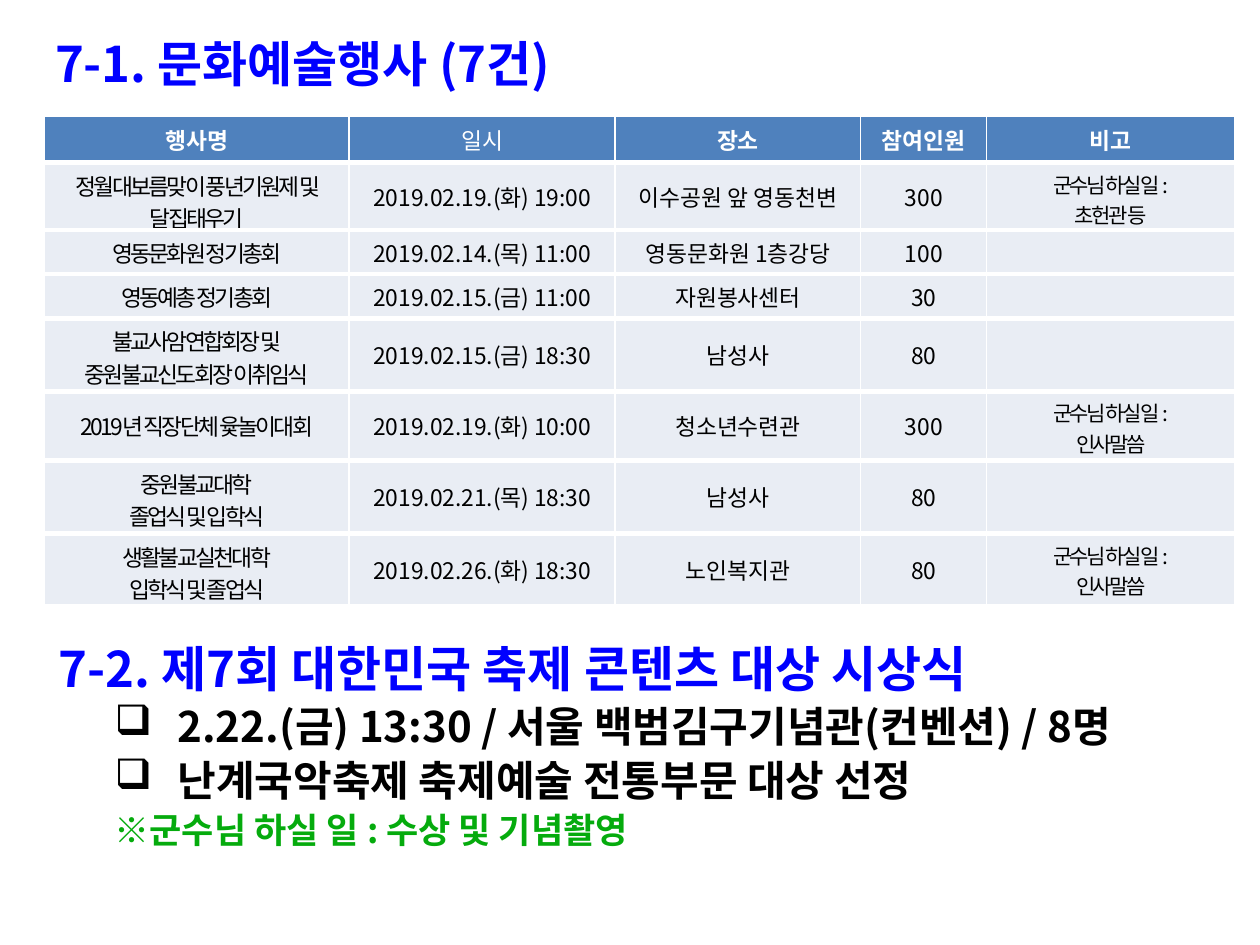
from lxml import etree
from pptx import Presentation
from pptx.dml.color import RGBColor
from pptx.enum import text
from pptx.oxml import ns
from pptx.util import Cm, Pt

FONT = "Noto Sans CJK KR"
BLUE = RGBColor(0x00, 0x00, 0xFF)
GREEN = RGBColor(0x05, 0xAB, 0x0D)
BLACK = RGBColor(0x00, 0x00, 0x00)
WHITE = RGBColor(0xFF, 0xFF, 0xFF)
HEADER_FILL = RGBColor(0x4F, 0x81, 0xBD)
BODY_FILL = RGBColor(0xE9, 0xED, 0xF4)

# Content
TITLE = "7-1. 문화예술행사 (7건)"
HEADERS = ["행사명", "일시", "장소", "참여인원", "비고"]
EVENTS = [
    ("정월대보름맞이 풍년기원제 및 달집태우기", "2019.02.19.(화) 19:00",
     "이수공원 앞 영동천변", "300", "군수님 하실 일 :\n초헌관 등"),
    ("영동문화원 정기총회", "2019.02.14.(목) 11:00", "영동문화원 1층강당", "100", ""),
    ("영동예총 정기총회", "2019.02.15.(금) 11:00", "자원봉사센터", "30", ""),
    ("불교사암연합회장 및\n중원불교신도회장 이취임식", "2019.02.15.(금) 18:30",
     "남성사", "80", ""),
    ("2019년 직장단체 윷놀이대회", "2019.02.19.(화) 10:00",
     "청소년수련관", "300", "군수님 하실 일 :\n인사말씀"),
    ("중원불교대학\n졸업식 및 입학식", "2019.02.21.(목) 18:30", "남성사", "80", ""),
    ("생활불교실천대학\n입학식 및 졸업식", "2019.02.26.(화) 18:30",
     "노인복지관", "80", "군수님 하실 일 :\n인사말씀"),
]
COLUMN_WIDTHS = [6.15, 5.36, 4.95, 2.54, 5]
ROW_HEIGHTS = [0.94, 0.89, 0.89, 0.89, 1.47, 1.4, 1.47, 1.47]
# text, size, colour, left margin, bullet, line spacing
AWARD_LINES = [
    ("7-2. 제7회 대한민국 축제 콘텐츠 대상 시상식", 28, BLUE, 1.42, None, 1.0),
    ("2.22.(금) 13:30 / 서울 백범김구기념관(컨벤션) / 8명", 24, BLACK, 2.54, "❑", 1.07),
    ("난계국악축제 축제예술 전통부문 대상 선정", 24, BLACK, 2.54, "❑", 1.07),
    ("※군수님 하실 일 : 수상 및 기념촬영", 20, GREEN, 2.54, None, 1.07),
]


def format_runs(paragraph, size, color, bold, spacing=0):
    for run in paragraph.runs:
        run.font.name = FONT
        run.font.size = Pt(size)
        run.font.bold = bold
        run.font.color.rgb = color
        properties = run.font._element
        if spacing:
            properties.set("spc", str(int(spacing * 100)))
        east_asian = etree.SubElement(properties, ns.qn("a:ea"))
        east_asian.set("typeface", FONT)


def add_lines(slide, box, top_margin, lines):
    frame = slide.shapes.add_textbox(*map(Cm, box)).text_frame
    frame.word_wrap = True
    frame.margin_top = Cm(top_margin)
    frame.text = "\n".join(line[0] for line in lines)
    for paragraph, line in zip(frame.paragraphs, lines):
        _, size, color, left, bullet, line_spacing = line
        properties = paragraph._p.get_or_add_pPr()
        properties.set("marL", str(Cm(left)))
        properties.set("indent", str(Cm(-1.27)))
        if bullet:
            bullet_color = etree.SubElement(properties, ns.qn("a:buClr"))
            etree.SubElement(bullet_color, ns.qn("a:srgbClr")).set("val", str(BLACK))
            etree.SubElement(properties, ns.qn("a:buChar")).set("char", bullet)
        paragraph.line_spacing = line_spacing
        format_runs(paragraph, size, color, True)


def set_borders(cell, top):
    properties = cell._tc.get_or_add_tcPr()
    for side, width in (("L", 1), ("R", 1), ("T", top), ("B", 3)):
        line = etree.SubElement(properties, ns.qn("a:ln" + side))
        line.set("w", str(Pt(width)))
        fill = etree.SubElement(line, ns.qn("a:solidFill"))
        etree.SubElement(fill, ns.qn("a:srgbClr")).set("val", str(WHITE))


def fill_cell(cell, value, row, column):
    header = row == 0
    set_borders(cell, 1 if header else 3)
    cell.fill.solid()
    cell.fill.fore_color.rgb = HEADER_FILL if header else BODY_FILL
    cell.vertical_anchor = text.MSO_ANCHOR.MIDDLE
    cell.text_frame.text = value
    size = 12 if column == 4 and not header else 13
    spacing = -1.5 if column in (0, 4) and not header else 0
    for paragraph in cell.text_frame.paragraphs:
        paragraph.alignment = text.PP_ALIGN.CENTER
        format_runs(paragraph, size, WHITE if header else BLACK,
                    header and column != 1, spacing)
        if not value:  # keeps an empty cell from growing its row
            paragraph._p.get_or_add_endParaRPr().set("sz", str(size * 100))


def add_event_table(slide):
    rows = [HEADERS, *EVENTS]
    frame = slide.shapes.add_table(len(rows), len(HEADERS),
                                   Cm(0.89), Cm(2.34), Cm(24), Cm(9.88))
    table = frame.table
    for column, width in zip(table.columns, COLUMN_WIDTHS):
        column.width = Cm(width)
    for row, height in zip(table.rows, ROW_HEIGHTS):
        row.height = Cm(height)
    frame.height = Cm(9.88)
    for row, values in enumerate(rows):
        for column, value in enumerate(values):
            fill_cell(table.cell(row, column), value, row, column)


def main():
    presentation = Presentation()
    presentation.slide_width, presentation.slide_height = Cm(25.4), Cm(19.05)
    slide = presentation.slides.add_slide(presentation.slide_layouts[6])
    # Events heading and table
    add_lines(slide, (0.71, 0.13, 15.39, 2.06), 0.55,
              [(TITLE, 28, BLUE, 1.42, None, 1.0)])
    add_event_table(slide)
    # Award ceremony
    add_lines(slide, (0.79, 12.57, 24.61, 5.36), 0.3, AWARD_LINES)
    presentation.save("out.pptx")


if __name__ == "__main__":
    main()
